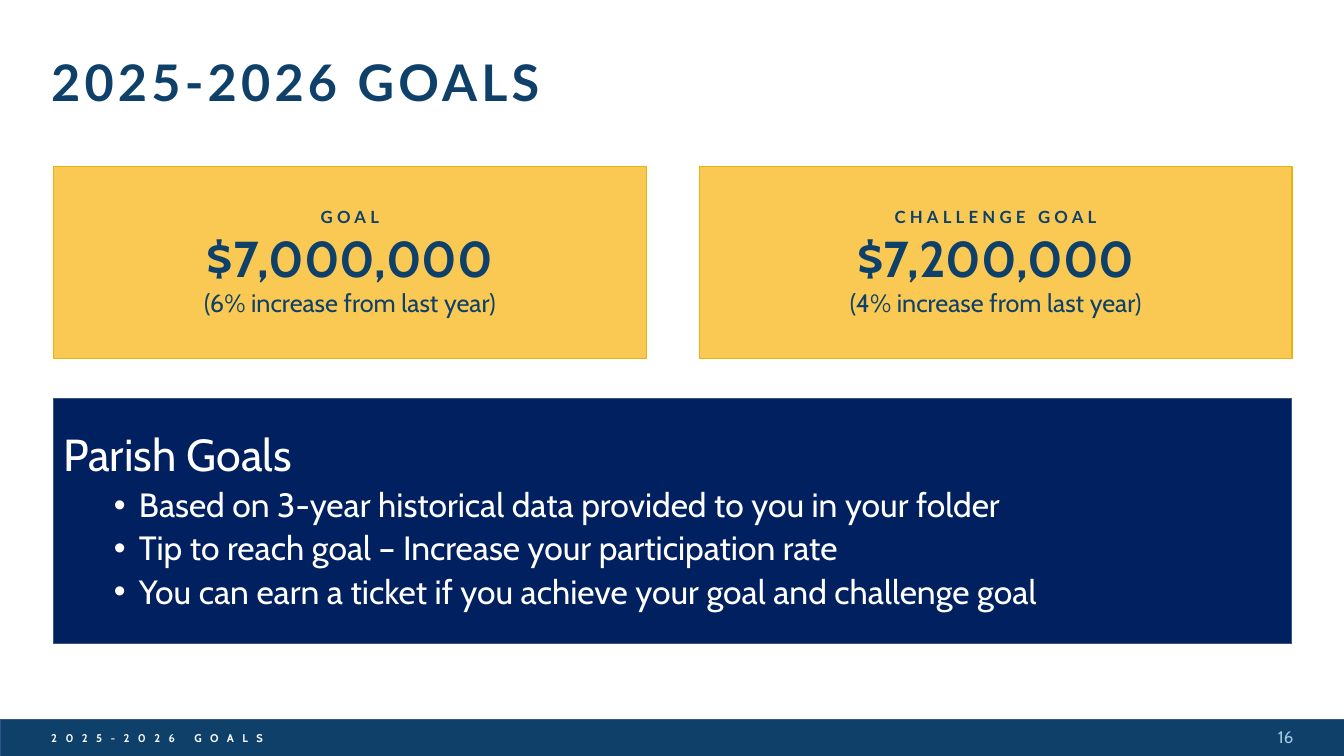
from pptx import Presentation
from pptx.dml.color import RGBColor
from pptx.enum.shapes import MSO_SHAPE
from pptx.enum.text import MSO_ANCHOR, PP_ALIGN
from pptx.util import Pt
from lxml import etree

RECTANGLE = MSO_SHAPE.RECTANGLE
TOP, MIDDLE = MSO_ANCHOR.TOP, MSO_ANCHOR.MIDDLE
LEFT, CENTER, RIGHT = PP_ALIGN.LEFT, PP_ALIGN.CENTER, PP_ALIGN.RIGHT
DRAWING = "http://schemas.openxmlformats.org/drawingml/2006/main"

COLORS = {
    "blue": "0E406A",
    "footer_line": "325491",
    "navy": "002060",
    "navy_line": "3A557A",
    "gold": "F9C954",
    "gold_line": "E8B217",
    "pale_blue": "A2C7E2",
    "white": "FFFFFF",
}

PARISH_GOALS = [
    "Based on 3-year historical data provided to you in your folder",
    "Tip to reach goal – Increase your participation rate",
    "You can earn a ticket if you achieve your goal and challenge goal",
]
GOAL_CARDS = [
    ("GOAL", "$7,000,000", "(6% increase from last year)"),
    ("CHALLENGE GOAL", "$7,200,000", "(4% increase from last year)"),
]
CARD_LEFT, CARD_STEP = 38.2, 461.3


def color(name):
    return RGBColor.from_string(COLORS[name])


def prepare_frame(shape, anchor):
    frame = shape.text_frame
    frame.word_wrap = True
    frame.vertical_anchor = anchor
    return frame


def add_panel(slide, left, top, width, height, fill, line, line_width=1, anchor=MIDDLE):
    shape = slide.shapes.add_shape(RECTANGLE, Pt(left), Pt(top), Pt(width), Pt(height))
    shape.shadow.inherit = False
    shape.fill.solid()
    shape.fill.fore_color.rgb = color(fill)
    shape.line.color.rgb = color(line)
    shape.line.width = Pt(line_width)
    return prepare_frame(shape, anchor)


def add_text_box(slide, left, top, width, height, anchor=MIDDLE):
    shape = slide.shapes.add_textbox(Pt(left), Pt(top), Pt(width), Pt(height))
    return prepare_frame(shape, anchor)


def add_bullet(paragraph):
    properties = paragraph._p.get_or_add_pPr()
    properties.set("marL", str(Pt(54)))
    properties.set("indent", str(Pt(-18)))
    font = etree.SubElement(properties, f"{{{DRAWING}}}buFont")
    font.set("typeface", "Arial")
    bullet = etree.SubElement(properties, f"{{{DRAWING}}}buChar")
    bullet.set("char", "•")


def write(frame, text, size, ink="white", font="Cabin", bold=False, tracking=0,
          align=LEFT, line_spacing=1.0, space_before=0, bulleted=False):
    paragraph = frame.paragraphs[0]
    if paragraph.runs:
        paragraph = frame.add_paragraph()
    paragraph.alignment = align
    paragraph.line_spacing = line_spacing
    paragraph.space_before = Pt(space_before)
    if bulleted:
        add_bullet(paragraph)
    run = paragraph.add_run()
    run.text = text
    run.font.size = Pt(size)
    run.font.name = font
    run.font.bold = bold
    run.font.color.rgb = color(ink)
    if tracking:
        run._r.get_or_add_rPr().set("spc", str(tracking * 100))


def add_goal_card(slide, left, label, amount, change):
    frame = add_panel(slide, left, 118.8, 423.4, 137.5, "gold", "gold_line")
    write(frame, label, 12, "blue", "Lato", bold=True, tracking=3, align=CENTER)
    write(frame, amount, 36, "blue", bold=True, align=CENTER)
    write(frame, change, 18, "blue", align=CENTER)


def add_parish_goals(slide):
    frame = add_panel(slide, CARD_LEFT, 284.4, 884.4, 175.5, "navy", "navy_line", 0.75, TOP)
    frame.margin_top = Pt(25)
    write(frame, "Parish Goals", 32, line_spacing=0.9)
    for goal in PARISH_GOALS:
        write(frame, goal, 24, line_spacing=0.9, space_before=5, bulleted=True)


def add_footer(slide, title):
    add_panel(slide, 0, 514, 962, 28, "blue", "footer_line")
    number = add_text_box(slide, 787, 512, 144, 28.8)
    write(number, "16", 12, "pale_blue", align=RIGHT)
    caption = add_text_box(slide, 29.5, 519.1, 313, 17.3, TOP)
    write(caption, title, 8, bold=True, tracking=6)


def main():
    presentation = Presentation()
    presentation.slide_width = Pt(960)
    presentation.slide_height = Pt(540)
    slide = presentation.slides.add_slide(presentation.slide_layouts[6])

    title = "2025-2026 GOALS"
    heading = add_text_box(slide, 29.5, 31, 903, 59.8)
    write(heading, title, 36, "blue", "Lato", bold=True, tracking=3, line_spacing=0.9)
    for index, card in enumerate(GOAL_CARDS):
        add_goal_card(slide, CARD_LEFT + index * CARD_STEP, *card)
    add_parish_goals(slide)
    add_footer(slide, title)
    presentation.save("out.pptx")


if __name__ == "__main__":
    main()
